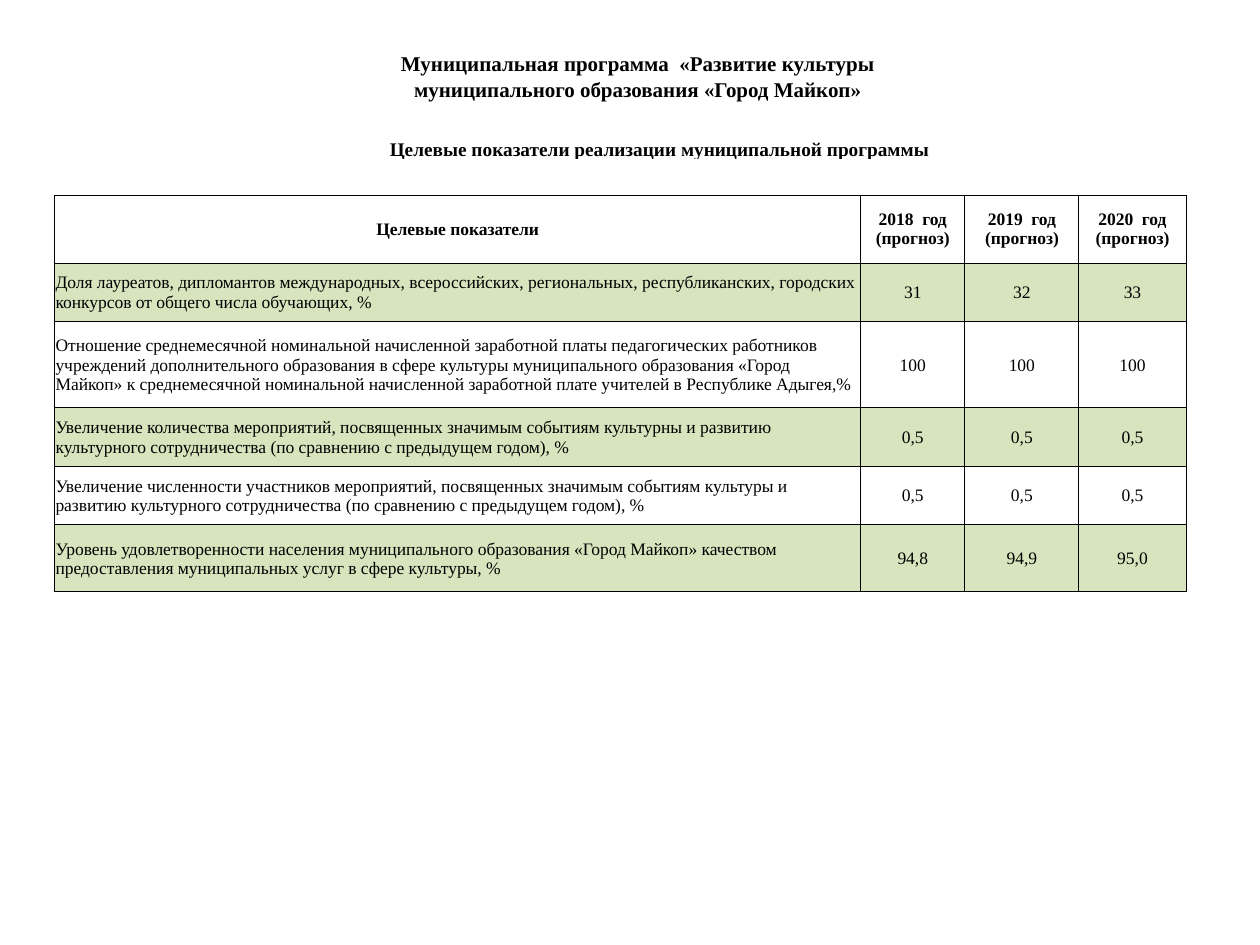
from lxml.etree import SubElement
from pptx import Presentation
from pptx.dml.color import RGBColor
from pptx.enum.text import MSO_ANCHOR as Anchor, MSO_AUTO_SIZE as AutoSize, PP_ALIGN as Align
from pptx.oxml.ns import qn
from pptx.util import Cm, Pt

# Content
TITLE = ["Муниципальная программа  «Развитие культуры",
         "муниципального образования «Город Майкоп»"]
SUBTITLE = "Целевые показатели реализации муниципальной программы"
HEADINGS = ["Целевые показатели"] + [f"{year}  год (прогноз)" for year in (2018, 2019, 2020)]
INDICATORS = [
    ("Доля лауреатов, дипломантов международных, всероссийских, региональных, "
     "республиканских, городских конкурсов от общего числа обучающих, %",
     "31", "32", "33"),
    ("Отношение среднемесячной номинальной начисленной заработной платы педагогических "
     "работников учреждений дополнительного образования в сфере культуры муниципального "
     "образования «Город Майкоп» к среднемесячной номинальной начисленной заработной "
     "плате учителей в Республике Адыгея,%",
     "100", "100", "100"),
    ("Увеличение количества мероприятий, посвященных значимым событиям культурны и "
     "развитию культурного сотрудничества (по сравнению с предыдущем годом), %",
     "0,5", "0,5", "0,5"),
    ("Увеличение численности участников мероприятий, посвященных значимым событиям "
     "культуры и развитию культурного сотрудничества (по сравнению с предыдущем годом), %",
     "0,5", "0,5", "0,5"),
    ("Уровень удовлетворенности населения муниципального образования «Город Майкоп» "
     "качеством предоставления муниципальных услуг в сфере культуры, %",
     "94,8", "94,9", "95,0"),
]
COLUMN_WIDTHS = [16.25, 2.1, 2.3, 2.16]
ROW_HEIGHTS = [1.37, 1.18, 1.74, 1.18, 1.18, 1.35]
COLORS = {"text": "000000", "border": "000000", "band": "D7E4BD"}
FONT = "Times New Roman"


def write(frame, lines, size=10, bold=False, align=Align.CENTER):
    frame.text = "\n".join(lines)
    for paragraph in frame.paragraphs:
        paragraph.alignment = align
        for run in paragraph.runs:
            run.font.name = FONT
            run.font.size = Pt(size)
            run.font.bold = bold
            run.font.color.rgb = RGBColor.from_string(COLORS["text"])


def add_grid(left, top, widths, heights):
    """Add a plain table without the style's header and bands."""
    table = slide.shapes.add_table(len(heights), len(widths), Cm(left), Cm(top),
                                   Cm(sum(widths)), Cm(sum(heights))).table
    table.first_row = table.horz_banding = False
    for column, width in zip(table.columns, widths):
        column.width = Cm(width)
    for row, height in zip(table.rows, heights):
        row.height = Cm(height)
    for cell in table.iter_cells():
        cell.margin_left = cell.margin_right = cell.margin_top = Cm(0.02)
        cell.margin_bottom = 0
        cell.vertical_anchor = Anchor.MIDDLE
        cell.fill.background()
    return table


def add_borders(cell):
    properties = cell._tc.get_or_add_tcPr()
    for position, side in enumerate(("a:lnL", "a:lnR", "a:lnT", "a:lnB")):
        line = SubElement(properties, qn(side), w=str(Pt(0.5)))
        SubElement(SubElement(line, qn("a:solidFill")), qn("a:srgbClr"), val=COLORS["border"])
        properties.insert(position, line)  # borders come before the fill


deck = Presentation()
deck.slide_width, deck.slide_height = Cm(25.4), Cm(19.05)
slide = deck.slides.add_slide(deck.slide_layouts[5])

# Title
title = slide.shapes.title
title.left, title.top, title.width, title.height = Cm(0.86), Cm(0.9), Cm(24), Cm(1.8)
title.text_frame.auto_size = AutoSize.NONE
title.text_frame.vertical_anchor = Anchor.TOP
write(title.text_frame, TITLE, size=12, bold=True)

# Subtitle in a one-cell table
subtitle = add_grid(3.7, 2.7, [19.2], [0.53]).cell(0, 0)
subtitle.vertical_anchor = Anchor.BOTTOM
write(subtitle.text_frame, [SUBTITLE], size=11, bold=True)

# Indicators, with every odd row shaded
indicators = add_grid(1.1, 3.93, COLUMN_WIDTHS, ROW_HEIGHTS)
for r, values in enumerate([HEADINGS] + INDICATORS):
    for c, value in enumerate(values):
        cell = indicators.cell(r, c)
        write(cell.text_frame, [value], bold=r == 0,
              align=Align.LEFT if r and c == 0 else Align.CENTER)
        if r in (1, 3, 5):
            cell.fill.solid()
            cell.fill.fore_color.rgb = RGBColor.from_string(COLORS["band"])
        add_borders(cell)

deck.save("out.pptx")
